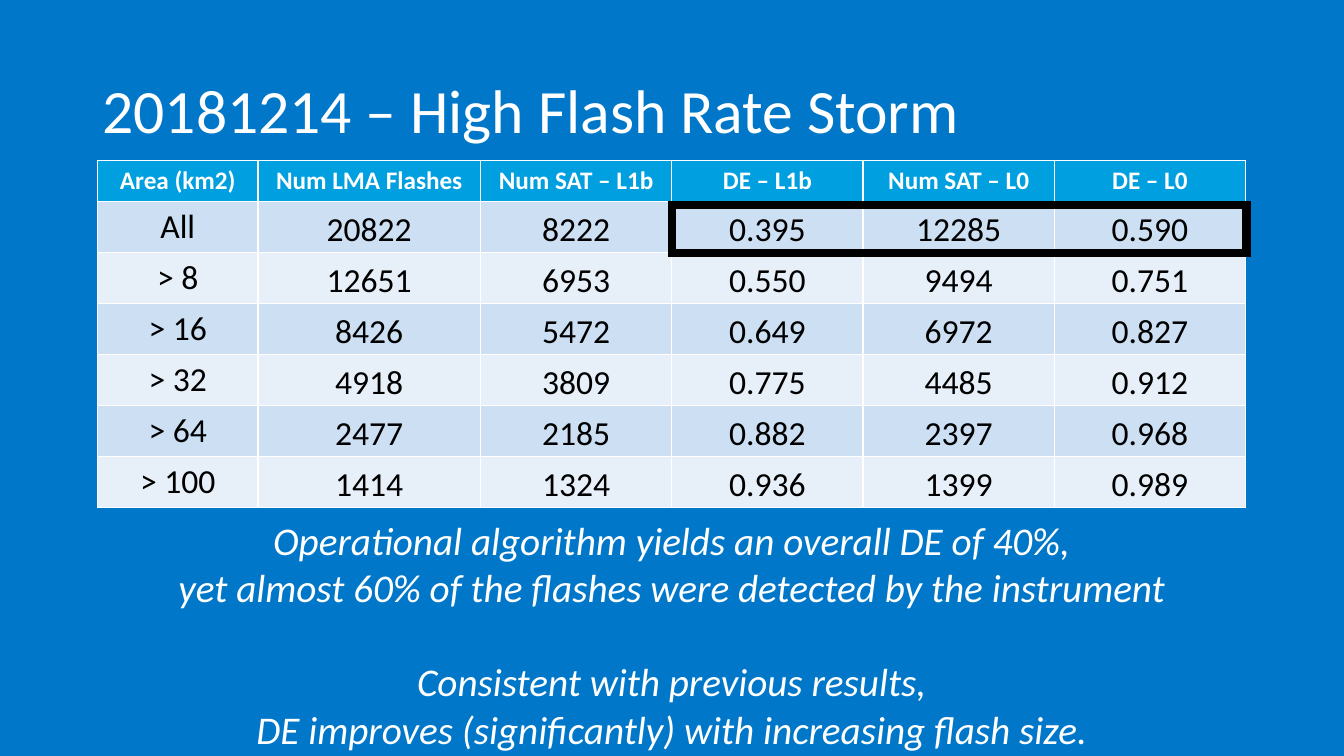
import lxml.etree
import pptx
import pptx.util
import pptx.dml.color
import pptx.enum.text
import pptx.enum.shapes
import pptx.oxml.ns

Cm = pptx.util.Cm
Pt = pptx.util.Pt
qn = pptx.oxml.ns.qn
ALIGN = pptx.enum.text.PP_ALIGN
ANCHOR = pptx.enum.text.MSO_ANCHOR
COLORS = {
    "back": "0077C8", "head": "009FDF", "odd": "CCDFF3", "even": "E7F0F9",
    "white": "FFFFFF", "black": "000000",
}


def color(name):
    return pptx.dml.color.RGBColor.from_string(COLORS[name])


def write(para, text, size, tint, align=ALIGN.CENTER, bold=False, italic=False):
    para.alignment = align
    run = para.add_run()
    run.text = text
    font = run.font
    font.name = "Calibri"
    font.size = Pt(size)
    font.bold = bold
    font.italic = italic
    font.color.rgb = color(tint)


# Slide and background
deck = pptx.Presentation()
deck.slide_width = Cm(33.87)
deck.slide_height = Cm(19.05)
slide = deck.slides.add_slide(deck.slide_layouts[5])
slide.background.fill.solid()
slide.background.fill.fore_color.rgb = color("back")

# Title
title = slide.shapes.title
title.left, title.top = Cm(2.33), Cm(1.01)
title.width, title.height = Cm(29.21), Cm(3.68)
title.text_frame.vertical_anchor = ANCHOR.MIDDLE
para = title.text_frame.paragraphs[0]
para.line_spacing = 0.9
write(para, "20181214 – High Flash Rate Storm", 44, "white", ALIGN.LEFT)

# Table of detection efficiency by flash area
rows = [
    ["Area (km2)", "Num LMA Flashes", "Num SAT – L1b", "DE – L1b", "Num SAT – L0", "DE – L0"],
    ["All", "20822", "8222", "0.395", "12285", "0.590"],
    ["> 8", "12651", "6953", "0.550", "9494", "0.751"],
    ["> 16", "8426", "5472", "0.649", "6972", "0.827"],
    ["> 32", "4918", "3809", "0.775", "4485", "0.912"],
    ["> 64", "2477", "2185", "0.882", "2397", "0.968"],
    ["> 100", "1414", "1324", "0.936", "1399", "0.989"],
]
widths = [4.04, 5.61] + [4.82] * 4
left, wide = Cm(2.46), Cm(sum(widths))
table = slide.shapes.add_table(
    len(rows), len(widths), left, Cm(4.04), wide, Cm(8.66)).table
for col, width in zip(table.columns, widths):
    col.width = Cm(width)

for r, row in enumerate(rows):
    table.rows[r].height = Cm(1.27 if r else 1.03)
    fill = "head" if r == 0 else "odd" if r % 2 else "even"
    for c, text in enumerate(row):
        cell = table.cell(r, c)
        cell.fill.solid()
        cell.fill.fore_color.rgb = color(fill)
        if r and c:
            cell.vertical_anchor = ANCHOR.BOTTOM
            cell.margin_left = cell.margin_right = Cm(0.08)
            cell.margin_top = cell.margin_bottom = Cm(0.05)
        para = cell.text_frame.paragraphs[0]
        if r:
            write(para, text, 24, "black")
        else:
            write(para, text, 18, "white", bold=True)

# Findings, with a gap of one line between the two statements
lines = [
    ("Operational algorithm yields an overall DE of 40%,", 0),
    ("yet almost 60% of the flashes were detected by the instrument", 0),
    ("Consistent with previous results,", 34),
    ("DE improves (significantly) with increasing flash size.", 0),
]
frame = slide.shapes.add_textbox(left, Cm(12.88), wide, Cm(6.25)).text_frame
frame.word_wrap = True
for i, (text, gap) in enumerate(lines):
    para = frame.add_paragraph() if i else frame.paragraphs[0]
    para.space_before = Pt(gap)
    write(para, text, 28, "white", italic=True)

# Frame with sharp corners around the overall result
box = slide.shapes.add_shape(
    pptx.enum.shapes.MSO_SHAPE.RECTANGLE, Cm(16.94), Cm(5.16), Cm(14.48), Cm(1.22))
box.shadow.inherit = False
box.fill.background()
box.line.color.rgb = color("black")
box.line.width = Pt(6)
edge = box.element.spPr.find(qn("a:ln"))
lxml.etree.SubElement(edge, qn("a:miter"), lim="800000")

deck.save("out.pptx")
